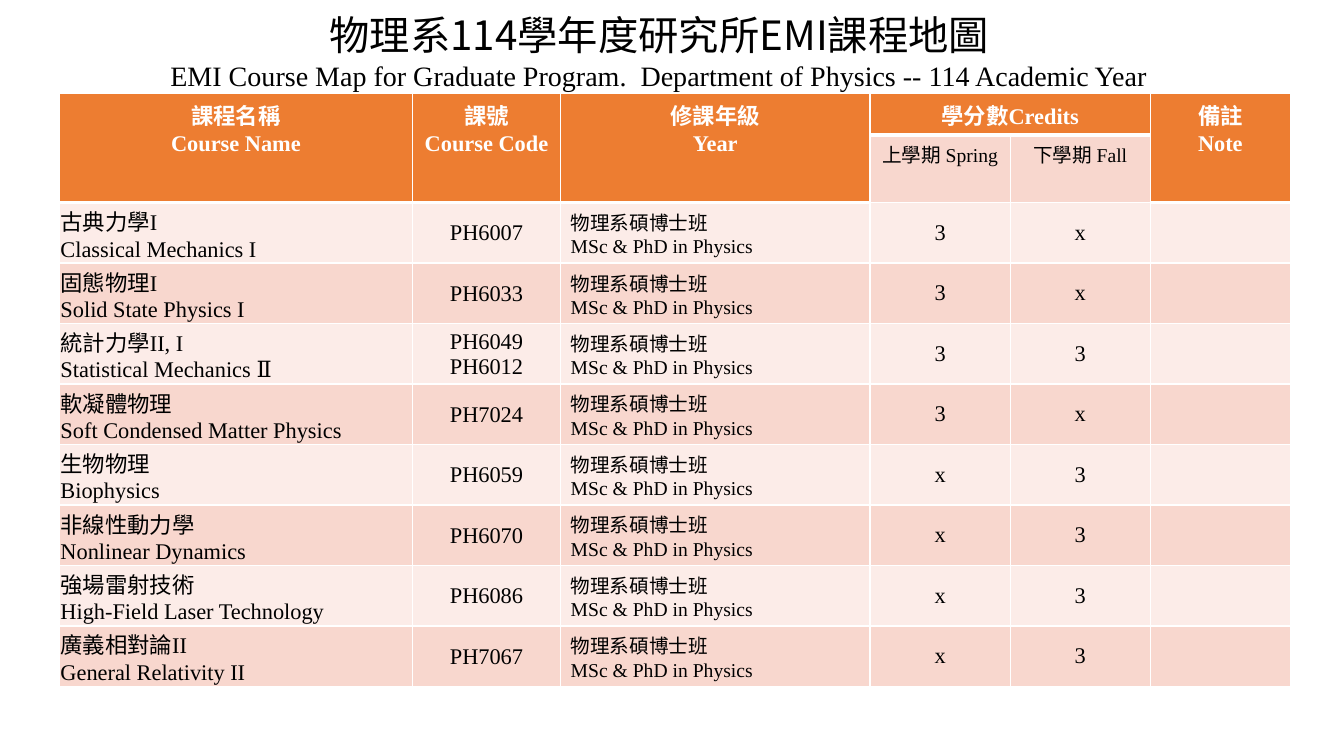
from typing import NamedTuple

from lxml import etree
from pptx import Presentation
from pptx import util as u
from pptx.dml import color
from pptx.enum import text
from pptx.oxml import ns

LATIN = "Times New Roman"
CHINESE = "Noto Sans CJK SC"
BLACK, WHITE, ORANGE = "000000", "FFFFFF", "ED7D31"
BANDS = ("FCECE8", "F8D7CE")
LEFT, CENTER = text.PP_ALIGN.LEFT, text.PP_ALIGN.CENTER
TOP, MIDDLE, BOTTOM = text.MSO_ANCHOR.TOP, text.MSO_ANCHOR.MIDDLE, text.MSO_ANCHOR.BOTTOM
COLUMNS = (3.5, 1.47, 3.07, 1.39, 1.39, 1.39)
HEADER_ROWS = (0.41, 0.67)
COURSE_ROW = 0.6


class Heading(NamedTuple):
    words: str
    left: float
    top: float
    width: float
    height: float
    size: float
    latin: str
    anchor: text.MSO_ANCHOR


class Header(NamedTuple):
    words: str
    row: int
    column: int
    last_row: int
    last_column: int


class Course(NamedTuple):
    name: str
    code: str
    spring: str
    fall: str


class Style(NamedTuple):
    fill: str
    size: float = 16
    color: str = BLACK
    bold: bool = False
    align: text.PP_ALIGN = CENTER
    anchor: text.MSO_ANCHOR = MIDDLE
    tight: bool = False
    bottom_line: float = 1


HEADINGS = (
    Heading("物理系114學年度研究所EMI課程地圖", 0.3, 0.07, 12.48, 0.57, 28.8, CHINESE, BOTTOM),
    Heading("EMI Course Map for Graduate Program.  Department of Physics -- 114 Academic Year",
            1.33, 0.57, 10.41, 0.45, 20, LATIN, TOP),
)
HEADERS = (
    Header("課程名稱\nCourse Name", 0, 0, 1, 0),
    Header("課號\nCourse Code", 0, 1, 1, 1),
    Header("修課年級\nYear", 0, 2, 1, 2),
    Header("學分數Credits", 0, 3, 0, 4),
    Header("備註\nNote", 0, 5, 1, 5),
)
TERMS = ("上學期 Spring", "下學期 Fall")
YEAR = "物理系碩博士班\nMSc & PhD in Physics"
COURSES = (
    Course("古典力學I\nClassical Mechanics I", "PH6007", "3", "x"),
    Course("固態物理I\nSolid State Physics I", "PH6033", "3", "x"),
    Course("統計力學II, I\nStatistical Mechanics Ⅱ", "PH6049\nPH6012", "3", "3"),
    Course("軟凝體物理\nSoft Condensed Matter Physics", "PH7024", "3", "x"),
    Course("生物物理\nBiophysics", "PH6059", "x", "3"),
    Course("非線性動力學\nNonlinear Dynamics", "PH6070", "x", "3"),
    Course("強場雷射技術\nHigh-Field Laser Technology", "PH6086", "x", "3"),
    Course("廣義相對論II\nGeneral Relativity II", "PH7067", "x", "3"),
)


def rgb(value: str) -> color.RGBColor:
    return color.RGBColor.from_string(value)


def write(frame, words: str, align: text.PP_ALIGN, ink: str, latin: str, font: dict) -> None:
    """Put each line of words in its own paragraph."""
    for index, line in enumerate(words.split("\n")):
        para = frame.add_paragraph() if index else frame.paragraphs[0]
        para.alignment = align
        span = para.add_run()
        span.text = line
        for key, value in font.items():
            setattr(span.font, key, value)
        span.font.color.rgb = rgb(ink)
        span.font.name = latin
        east_asian = etree.SubElement(span.font._element, ns.qn("a:ea"))
        east_asian.set("typeface", CHINESE)


def draw_heading(page, heading: Heading) -> None:
    box = page.shapes.add_textbox(u.Inches(heading.left), u.Inches(heading.top),
                                  u.Inches(heading.width), u.Inches(heading.height))
    frame = box.text_frame
    frame.word_wrap = True
    frame.vertical_anchor = heading.anchor
    write(frame, heading.words, CENTER, BLACK, heading.latin, {"size": u.Pt(heading.size)})
    frame.paragraphs[0].line_spacing = 0.9


def draw_borders(cell, bottom_line: float) -> None:
    properties = cell._tc.get_or_add_tcPr()
    for side, width in {"L": 1, "R": 1, "T": 1, "B": bottom_line}.items():
        line = etree.SubElement(properties, ns.qn(f"a:ln{side}"), w=str(u.Pt(width)))
        fill = etree.SubElement(line, ns.qn("a:solidFill"))
        etree.SubElement(fill, ns.qn("a:srgbClr"), val=WHITE)


def paint_cell(cell, style: Style) -> None:
    draw_borders(cell, style.bottom_line)
    cell.fill.solid()
    cell.fill.fore_color.rgb = rgb(style.fill)


def draw_cell(cell, words: str, style: Style) -> None:
    paint_cell(cell, style)
    cell.vertical_anchor = style.anchor
    if style.tight:
        margins = {"margin_left": 0.01, "margin_right": 0.01, "margin_top": 0.01, "margin_bottom": 0}
        for key, value in margins.items():
            setattr(cell, key, u.Inches(value))
    if words:
        write(cell.text_frame, words, style.align, style.color, LATIN,
              {"size": u.Pt(style.size), "bold": style.bold})


def draw_header(table, header: Header) -> None:
    style = Style(ORANGE, color=WHITE, bold=True, anchor=TOP, bottom_line=3)
    first = table.cell(header.row, header.column)
    first.merge(table.cell(header.last_row, header.last_column))
    draw_cell(first, header.words, style)
    paint_cell(table.cell(header.last_row, header.last_column), style)


def draw_course(table, row: int, course: Course, fill: str) -> None:
    plain = Style(fill)
    contents = (
        (course.name, Style(fill, align=LEFT, tight=True)),
        (course.code, Style(fill, tight=True)),
        (YEAR, Style(fill, size=14, align=LEFT)),
        (course.spring, plain),
        (course.fall, plain),
        ("", plain),
    )
    for column, (words, style) in enumerate(contents):
        draw_cell(table.cell(row, column), words, style)


def draw_table(page) -> None:
    heights = HEADER_ROWS + (COURSE_ROW,) * len(COURSES)
    table = page.shapes.add_table(len(heights), len(COLUMNS), u.Inches(0.59), u.Inches(0.93),
                                  u.Inches(sum(COLUMNS)), u.Inches(sum(heights))).table
    for column, width in zip(table.columns, COLUMNS):
        column.width = u.Inches(width)
    for row, height in zip(table.rows, heights):
        row.height = u.Inches(height)

    # Header rows
    for header in HEADERS:
        draw_header(table, header)
    for column, term in enumerate(TERMS, start=3):
        draw_cell(table.cell(1, column), term, Style(BANDS[1], size=14, anchor=TOP))

    # Course rows in alternating tints
    for index, course in enumerate(COURSES):
        draw_course(table, index + len(HEADER_ROWS), course, BANDS[index % 2])


def main() -> None:
    deck = Presentation()
    deck.slide_width, deck.slide_height = u.Inches(13.33), u.Inches(7.5)
    page = deck.slides.add_slide(deck.slide_layouts[6])
    for heading in HEADINGS:
        draw_heading(page, heading)
    draw_table(page)
    deck.save("out.pptx")


if __name__ == "__main__":
    main()
